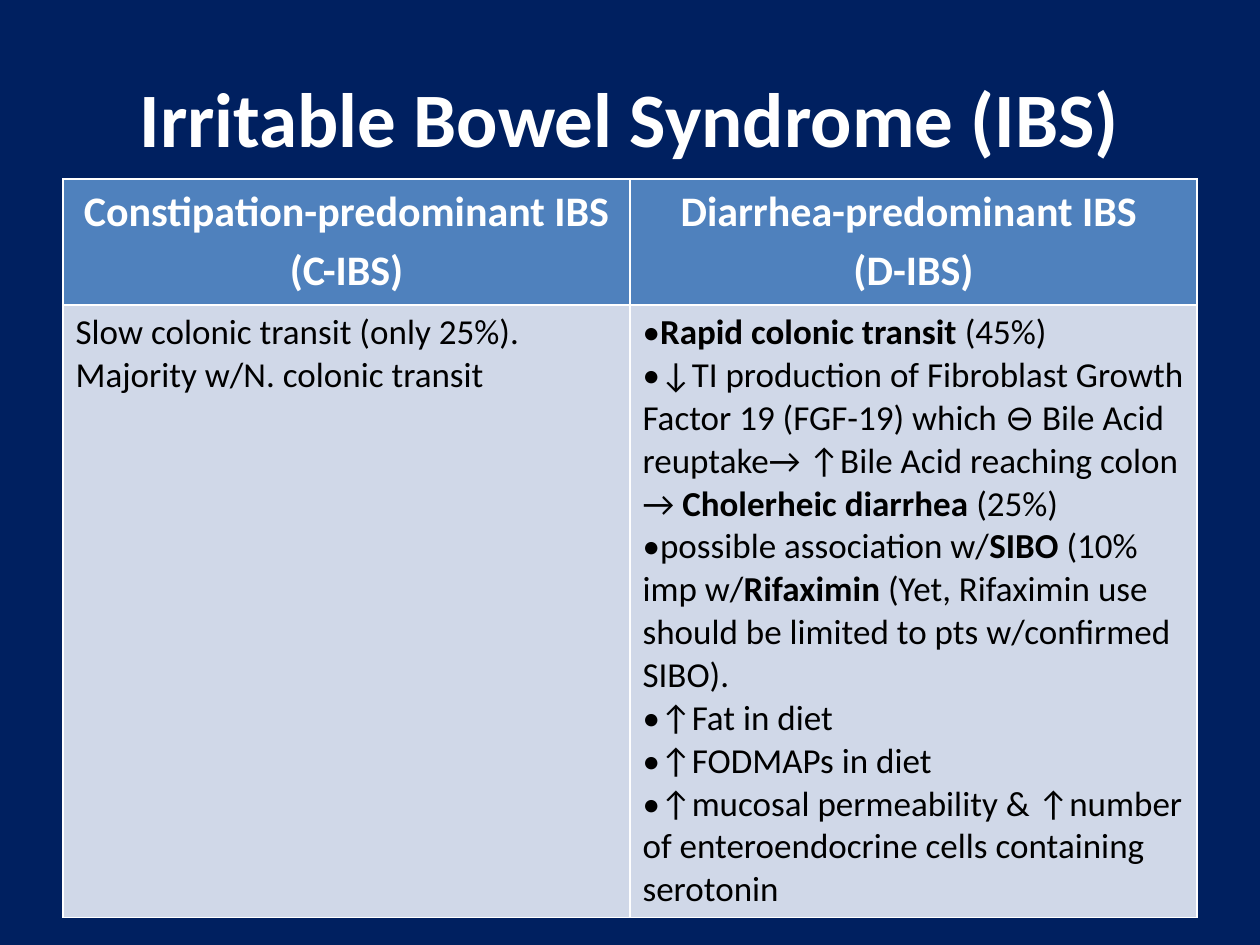
from dataclasses import dataclass, field

from pptx import Presentation
from pptx import util as u
from pptx.dml.color import RGBColor
from pptx.enum import text

COLORS = {"background": "002060", "light": "FFFFFF", "dark": "000000",
          "heading": "4F81BD", "body": "D0D8E8"}
TITLE = {"size": u.Pt(44), "bold": True, "name": "Calibri"}
HEADING = {"size": u.Pt(24), "bold": True, "name": "Calibri"}
BODY = {"size": u.Pt(20), "bold": False, "name": "Calibri"}
CENTERED = {"alignment": text.PP_ALIGN.CENTER}
HEADING_LINES = {**CENTERED, "line_spacing": 1.15}
HEADING_MARGINS = {"margin_left": u.Inches(0.07), "margin_top": 0,
                   "margin_right": u.Inches(0.07), "margin_bottom": 0}

SUBTYPES = [
    [["Constipation-predominant IBS (C-IBS)"]],
    [["Diarrhea-predominant IBS "], ["(D-IBS)"]],
]
FEATURES = [
    [["Slow colonic transit (only 25%)."], ["Majority w/N. colonic transit"]],
    [
        ["•", "Rapid colonic transit", " (45%)"],
        ["•↓TI production of Fibroblast Growth Factor 19 (FGF-19) which ⊖ "
         "Bile Acid reuptake→ ↑Bile Acid reaching colon → ",
         "Cholerheic diarrhea", " (25%)"],
        ["•possible association w/", "SIBO", " (10% imp w/", "Rifaximin",
         " (Yet, Rifaximin use should be limited to pts w/confirmed SIBO)."],
        ["•↑Fat in diet"],
        ["•↑FODMAPs in diet"],
        ["•↑mucosal permeability & ↑number of enteroendocrine cells "
         "containing serotonin"],
    ],
]


def apply(target, values):
    for key, value in values.items():
        setattr(target, key, value)


@dataclass
class Deck:
    slide: object
    colors: dict = field(default_factory=lambda: COLORS)

    def paint(self, fill, color):
        fill.solid()
        fill.fore_color.rgb = RGBColor.from_string(self.colors[color])

    def background(self, color):
        self.paint(self.slide.background.fill, color)

    def paragraphs(self, frame, lines, font, color, layout):
        for index, pieces in enumerate(lines):
            line = frame.add_paragraph() if index else frame.paragraphs[0]
            apply(line, layout)
            for position, wording in enumerate(pieces):
                run = line.add_run()
                run.text = wording
                apply(run.font, font)
                run.font.bold = font["bold"] or position % 2 == 1
                run.font.color.rgb = RGBColor.from_string(self.colors[color])

    def title(self, wording, box):
        heading = self.slide.shapes.title
        apply(heading, dict(zip(("left", "top", "width", "height"), box)))
        heading.text_frame.vertical_anchor = text.MSO_ANCHOR.MIDDLE
        self.paragraphs(heading.text_frame, [[wording]], TITLE, "light", CENTERED)

    def comparison(self, headings, features, box, heights):
        grid = self.slide.shapes.add_table(2, len(headings), *box).table
        for row, height in zip(grid.rows, heights):
            row.height = height
        for column, (heading, feature) in enumerate(zip(headings, features)):
            top, bottom = grid.cell(0, column), grid.cell(1, column)
            apply(top, HEADING_MARGINS)
            self.paint(top.fill, "heading")
            self.paint(bottom.fill, "body")
            self.paragraphs(top.text_frame, heading, HEADING, "light", HEADING_LINES)
            self.paragraphs(bottom.text_frame, feature, BODY, "dark", {})


def main():
    presentation = Presentation()
    presentation.slide_width = u.Inches(10)
    presentation.slide_height = u.Inches(7.5)
    deck = Deck(presentation.slides.add_slide(presentation.slide_layouts[5]))
    deck.background("background")
    deck.title("Irritable Bowel Syndrome (IBS)",
               [u.Inches(n) for n in (0.5, 0.3, 9, 1.25)])
    deck.comparison(SUBTYPES, FEATURES,
                    [u.Inches(n) for n in (0.5, 1.42, 9, 5.5)],
                    [u.Inches(n) for n in (1, 4.5)])
    presentation.save("out.pptx")


if __name__ == "__main__":
    main()
